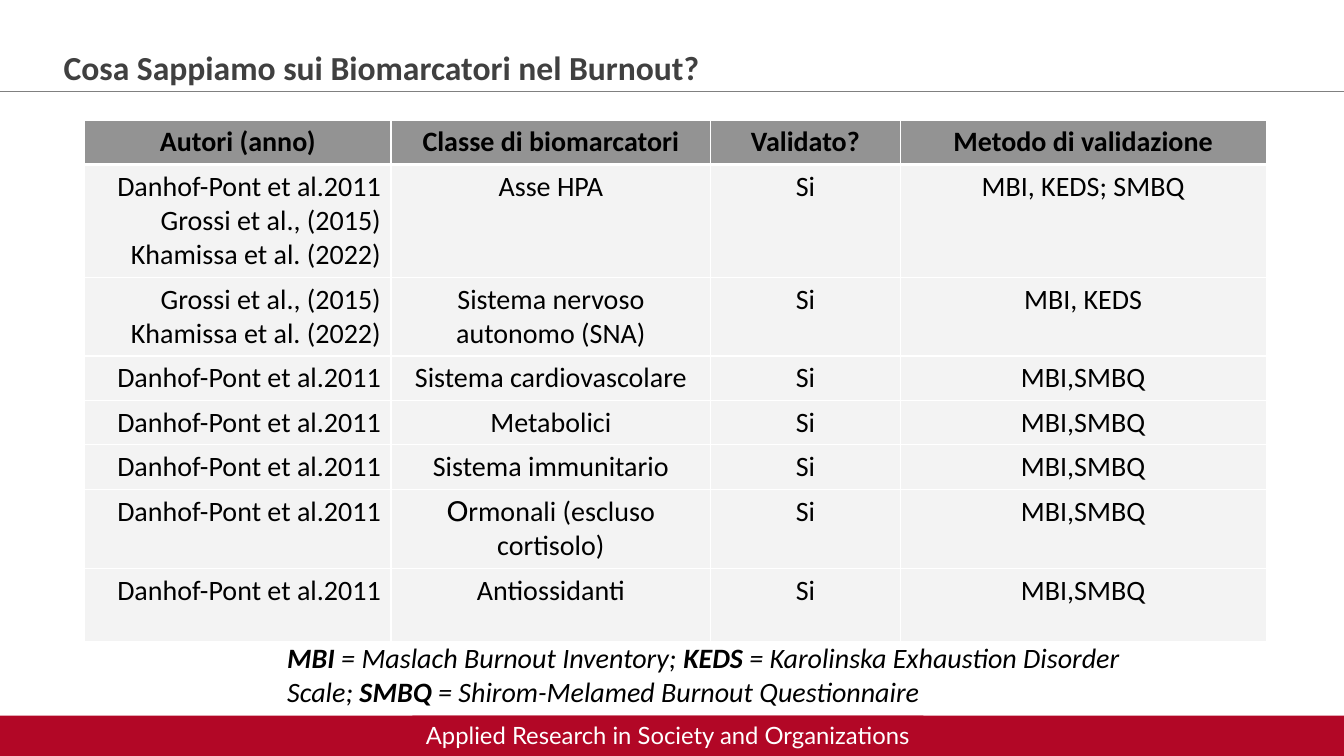
from dataclasses import dataclass, replace

import pptx
import pptx.dml.color
import pptx.enum.shapes
import pptx.enum.text
import pptx.oxml
import pptx.oxml.ns
import pptx.util

Color = pptx.dml.color.RGBColor
Align = pptx.enum.text.PP_ALIGN
Anchor = pptx.enum.text.MSO_ANCHOR

WHITE = Color(0xFF, 0xFF, 0xFF)
BLACK = Color(0, 0, 0)
DARK = Color(0x40, 0x40, 0x40)
GRAY = Color(0x80, 0x80, 0x80)
RED = Color(0xB2, 0x07, 0x26)
HEAD = Color(0x93, 0x93, 0x93)
PALE = Color(0xF3, 0xF3, 0xF3)

WIDE = pptx.util.Inches(13.33)
HIGH = pptx.util.Inches(7.5)


@dataclass(frozen=True)
class Box:
    x: float
    y: float
    w: float
    h: float

    def place(self) -> tuple[int, int, int, int]:
        return across(self.x), down(self.y), across(self.w), down(self.h)


@dataclass(frozen=True)
class Style:
    size: float = 20
    font: str = "Calibri"
    color: Color = BLACK
    bold: bool = False
    slant: bool = False


@dataclass(frozen=True)
class Run:
    text: str
    style: Style


@dataclass(frozen=True)
class Entry:
    names: tuple[str, ...]
    kind: tuple[Run, ...]
    method: str
    height: float


PLAIN = Style()
BOLD = Style(bold=True)
TERM = Style(bold=True, slant=True)
NOTE = Style(slant=True)

DANHOF = "Danhof-Pont et al.2011"
GROSSI = "Grossi et al., (2015)"
KHAMISSA = "Khamissa et al. (2022)"
BOTH = "MBI,SMBQ"

COLS = (22.8, 23.78, 14.1, 27.23)
TOP = 5.73
HEADS = ("Autori (anno)", "Classe di biomarcatori", "Validato?", "Metodo di validazione")
ENTRIES = (
    Entry((DANHOF, GROSSI, KHAMISSA), (Run("Asse HPA", PLAIN),), "MBI, KEDS; SMBQ", 14.67),
    Entry((GROSSI, KHAMISSA), (Run("Sistema nervoso autonomo (SNA)", PLAIN),), "MBI, KEDS", 10.27),
    Entry((DANHOF,), (Run("Sistema cardiovascolare", PLAIN),), BOTH, 5.73),
    Entry((DANHOF,), (Run("Metabolici", PLAIN),), BOTH, 5.87),
    Entry((DANHOF,), (Run("Sistema immunitario", PLAIN),), BOTH, 5.87),
    Entry(
        (DANHOF,),
        (Run("O", replace(PLAIN, font="Cabin")), Run("rmonali (escluso cortisolo)", PLAIN)),
        BOTH,
        10.13,
    ),
    Entry((DANHOF,), (Run("Antiossidanti", PLAIN),), BOTH, 9.73),
)
LEGEND = (
    Run("MBI", TERM),
    Run(" = Maslach Burnout Inventory; ", NOTE),
    Run("KEDS", TERM),
    Run(" = Karolinska Exhaustion Disorder Scale; ", NOTE),
    Run("SMBQ", TERM),
    Run(" = Shirom-Melamed Burnout Questionnaire", NOTE),
)


def across(share: float) -> int:
    return round(WIDE * share / 100)


def down(share: float) -> int:
    return round(HIGH * share / 100)


def write(frame, lines, align=Align.LEFT) -> None:
    for i, line in enumerate(lines):
        para = frame.add_paragraph() if i else frame.paragraphs[0]
        para.alignment = align
        for item in line:
            run = para.add_run()
            run.text = item.text
            font = run.font
            font.size = pptx.util.Pt(item.style.size)
            font.name = item.style.font
            font.color.rgb = item.style.color
            font.bold = item.style.bold
            font.italic = item.style.slant


def edge(cell, top: float, base: float) -> None:
    props = cell._tc.get_or_add_tcPr()
    for i, (side, width) in enumerate((("L", 1), ("R", 1), ("T", top), ("B", base))):
        line = pptx.oxml.parse_xml(
            f'<a:ln{side} {pptx.oxml.ns.nsdecls("a")} w="{pptx.util.Pt(width)}">'
            f'<a:solidFill><a:srgbClr val="{WHITE}"/></a:solidFill></a:ln{side}>'
        )
        props.insert(i, line)


def add_title(slide) -> None:
    title = slide.shapes.title
    title.left, title.top, title.width, title.height = Box(3.98, 5.47, 88.45, 6.67).place()
    frame = title.text_frame
    frame.auto_size = pptx.enum.text.MSO_AUTO_SIZE.NONE
    frame.vertical_anchor = Anchor.MIDDLE
    write(frame, [[Run("Cosa Sappiamo sui Biomarcatori nel Burnout?", Style(24, color=DARK, bold=True))]])


def add_rule(slide) -> None:
    y = down(12.13)
    rule = slide.shapes.add_connector(pptx.enum.shapes.MSO_CONNECTOR.STRAIGHT, 0, y, WIDE, y)
    rule.line.color.rgb = GRAY
    rule.line.width = pptx.util.Pt(0.25)
    rule._element.spPr.append(pptx.oxml.parse_xml(f'<a:effectLst {pptx.oxml.ns.nsdecls("a")}/>'))


def add_bar(slide, box: Box):
    bar = slide.shapes.add_shape(pptx.enum.shapes.MSO_SHAPE.RECTANGLE, *box.place())
    bar.shadow.inherit = False
    bar.fill.solid()
    bar.fill.fore_color.rgb = RED
    bar.line.fill.background()
    return bar


def add_grid(slide) -> None:
    rows = (TOP, *(entry.height for entry in ENTRIES))
    box = Box(6.3, 15.87, sum(COLS), sum(rows))
    grid = slide.shapes.add_table(len(rows), len(COLS), *box.place()).table
    grid.first_row = False
    grid.horz_banding = False
    for col, width in zip(grid.columns, COLS):
        col.width = across(width)
    for row, height in zip(grid.rows, rows):
        row.height = down(height)

    body = [[[[Run(head, BOLD)]] for head in HEADS]]
    for entry in ENTRIES:
        names = [[Run(name, PLAIN)] for name in entry.names]
        body.append([names, [entry.kind], [[Run("Si", PLAIN)]], [[Run(entry.method, PLAIN)]]])
    for r, line in enumerate(body):
        for c, lines in enumerate(line):
            cell = grid.cell(r, c)
            cell.fill.solid()
            cell.fill.fore_color.rgb = PALE if r else HEAD
            edge(cell, 3 if r == 1 else 1, 1 if r else 3)
            write(cell.text_frame, lines, Align.RIGHT if r and c == 0 else Align.CENTER)


def add_note(slide) -> None:
    note = slide.shapes.add_textbox(*Box(20.63, 84.13, 64.67, 10.53).place())
    note.text_frame.word_wrap = True
    write(note.text_frame, [LEGEND])


def main() -> None:
    deck = pptx.Presentation()
    deck.slide_width, deck.slide_height = WIDE, HIGH
    slide = deck.slides.add_slide(deck.slide_layouts.get_by_name("Title Only"))
    add_rule(slide)
    add_bar(slide, Box(0, 94.67, 100, 5.33))
    add_title(slide)
    label = add_bar(slide, Box(30.68, 94.67, 38.03, 5.2))
    label.text_frame.word_wrap = False
    label.text_frame.vertical_anchor = Anchor.MIDDLE
    motto = Run("Applied Research in Society and Organizations", Style(17, "Lato", WHITE))
    write(label.text_frame, [[motto]], Align.CENTER)
    add_grid(slide)
    add_note(slide)
    deck.save("out.pptx")


if __name__ == "__main__":
    main()
